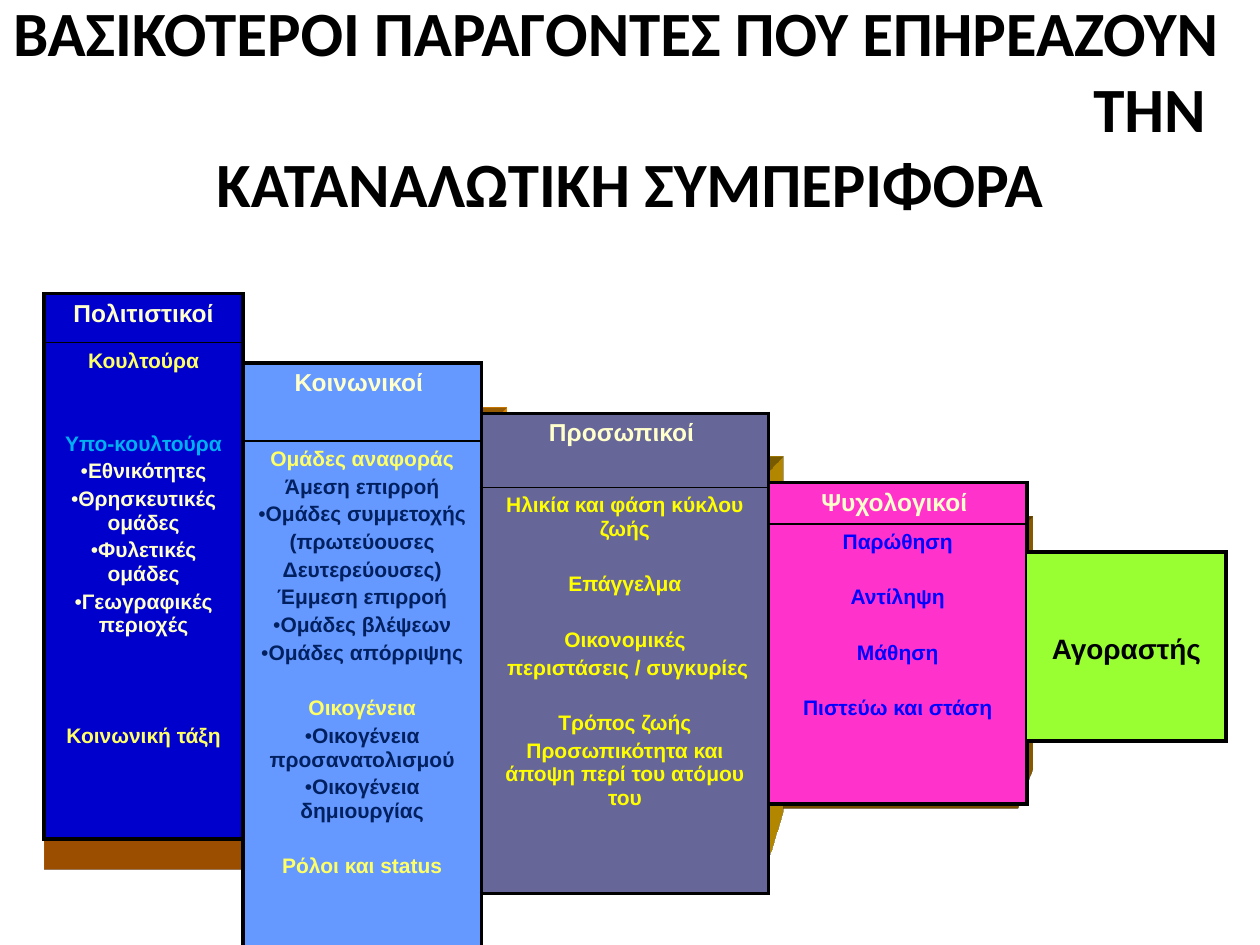
import pptx
import pptx.util
import pptx.dml.color
import pptx.enum.shapes
import pptx.enum.text
from lxml import etree

RGBColor = pptx.dml.color.RGBColor
Pt = pptx.util.Pt
ALIGN = pptx.enum.text.PP_ALIGN
ANCHOR = pptx.enum.text.MSO_ANCHOR
A = "http://schemas.openxmlformats.org/drawingml/2006/main"

BLACK = RGBColor(0x00, 0x00, 0x00)
CREAM = RGBColor(0xFF, 0xFF, 0xCC)
LEMON = RGBColor(0xFF, 0xFF, 0x66)
YELLOW = RGBColor(0xFF, 0xFF, 0x00)
SKY = RGBColor(0x00, 0xB0, 0xF0)
NAVY = RGBColor(0x00, 0x20, 0x60)
BLUE = RGBColor(0x00, 0x00, 0xFF)
CULTURAL = RGBColor(0x00, 0x00, 0xCC)
SOCIAL = RGBColor(0x66, 0x99, 0xFF)
PERSONAL = RGBColor(0x66, 0x66, 0x99)
PSYCHOLOGICAL = RGBColor(0xFF, 0x33, 0xCC)
BUYER = RGBColor(0x99, 0xFF, 0x33)

LINE_PITCH = 15.84  # one 12 pt line with its spacing, in points
THICK, THIN = 2.25, 1


def write(frame, text, *, size, color, font="Arial", align=ALIGN.CENTER,
          gap=0, bullet=False, right=0):
    """Add a bold paragraph; gap is the number of free lines above it."""
    first = not frame.text
    paragraph = frame.paragraphs[0] if first else frame.add_paragraph()
    properties = paragraph._p.get_or_add_pPr()
    for name, value in [("marL", 0), ("marR", right), ("indent", 0)]:
        properties.set(name, str(int(value)))
    if bullet:
        etree.SubElement(properties, f"{{{A}}}buFont", typeface="Arial")
        etree.SubElement(properties, f"{{{A}}}buChar", char="•")
    paragraph.alignment = align
    if not first and font == "Arial":
        paragraph.space_before = Pt(0.2 * size + gap * LINE_PITCH)
    run = paragraph.add_run()
    run.text = text
    run.font.name, run.font.size, run.font.bold = font, Pt(size), True
    run.font.color.rgb = color


def style_cell(cell, fill, left=THICK, right=THICK, top=THICK, bottom=THICK):
    properties = cell._tc.get_or_add_tcPr()
    for side, width in zip("LRTB", (left, right, top, bottom)):
        line = etree.SubElement(properties, f"{{{A}}}ln{side}", w=str(Pt(width)))
        if width:
            solid = etree.SubElement(line, f"{{{A}}}solidFill")
            etree.SubElement(solid, f"{{{A}}}srgbClr", val=str(BLACK))
        else:
            etree.SubElement(line, f"{{{A}}}noFill")
    cell.fill.solid()
    cell.fill.fore_color.rgb = fill


deck = pptx.Presentation()
deck.slide_width, deck.slide_height = pptx.util.Inches(10), pptx.util.Inches(7.5)
COL, ROW = deck.slide_width / 100, deck.slide_height / 75
slide = deck.slides.add_slide(deck.slide_layouts[5])

title = slide.shapes.title
title.left, title.top = 0, 0
title.width, title.height = deck.slide_width, int(17 * ROW)
heading = title.text_frame
heading.word_wrap = True
heading.auto_size = pptx.enum.text.MSO_AUTO_SIZE.NONE
heading.vertical_anchor = ANCHOR.MIDDLE
for line, align, right in [
    ("ΒΑΣΙΚΟΤΕΡΟΙ ΠΑΡΑΓΟΝΤΕΣ ΠΟΥ ΕΠΗΡΕΑΖΟΥΝ", ALIGN.CENTER, 2.2 * COL),
    ("ΤΗΝ", ALIGN.RIGHT, 3.3 * COL),
    ("ΚΑΤΑΝΑΛΩΤΙΚΗ ΣΥΜΠΕΡΙΦΟΡΑ", ALIGN.CENTER, 0),
]:
    write(heading, line, size=36, color=BLACK, font="Calibri", align=align, right=right)

# Extruded blocks standing behind the panels
for left, top, width, height, color in [
    (60.2, 42.2, 20.5, 22, RGBColor(0x99, 0x66, 0x00)),
    (37.4, 37.5, 23.6, 30.7, RGBColor(0xCC, 0x99, 0x00)),
    (20.1, 33.6, 18.9, 35.4, RGBColor(0xFF, 0x99, 0x00)),
    (3.5, 31.2, 15.7, 37.8, RGBColor(0xCC, 0x66, 0x00)),
]:
    block = slide.shapes.add_shape(
        pptx.enum.shapes.MSO_SHAPE.RECTANGLE,
        int(left * COL), int(top * ROW), int(width * COL), int(height * ROW))
    block.shadow.inherit = False
    block.fill.solid()
    block.fill.fore_color.rgb = color
    block.line.fill.background()
    scene = etree.SubElement(block._element.spPr, f"{{{A}}}scene3d")
    etree.SubElement(scene, f"{{{A}}}camera", prst="legacyPerspectiveTopRight")
    etree.SubElement(scene, f"{{{A}}}lightRig", rig="legacyFlat3", dir="b")
    depth = etree.SubElement(block._element.spPr, f"{{{A}}}sp3d",
                             extrusionH="887400", prstMaterial="legacyMatte")
    extrusion = etree.SubElement(depth, f"{{{A}}}extrusionClr")
    etree.SubElement(extrusion, f"{{{A}}}srgbClr", val=str(color))

# Each factor: heading, fill, top, width, row heights,
# then (text, colour, free lines above, bullet)
factors = [
    ("Πολιτιστικοί", CULTURAL, 23.3, 15.8, (3.9, 39.4), [
        ("Κουλτούρα", LEMON, 0, False),
        ("Υπο-κουλτούρα", SKY, 2, False),
        ("Εθνικότητες", CREAM, 0, True),
        ("Θρησκευτικές ομάδες", CREAM, 0, True),
        ("Φυλετικές ομάδες", CREAM, 0, True),
        ("Γεωγραφικές περιοχές", CREAM, 0, True),
        ("Κοινωνική τάξη", LEMON, 3, False)]),
    ("Κοινωνικοί ", SOCIAL, 28.8, 18.9, (6.2, 40.2), [
        ("Ομάδες αναφοράς", LEMON, 0, False),
        ("Άμεση επιρροή", NAVY, 0, False),
        ("Ομάδες συμμετοχής", NAVY, 0, True),
        ("(πρωτεύουσες", NAVY, 0, False),
        ("Δευτερεύουσες)", NAVY, 0, False),
        ("Έμμεση επιρροή", NAVY, 0, False),
        ("Ομάδες βλέψεων", NAVY, 0, True),
        ("Ομάδες απόρριψης", NAVY, 0, True),
        ("Οικογένεια", LEMON, 1, False),
        ("Οικογένεια προσανατολισμού", NAVY, 0, True),
        ("Οικογένεια δημιουργίας", NAVY, 0, True),
        ("Ρόλοι και status", LEMON, 1, False)]),
    ("Προσωπικοί ", PERSONAL, 32.8, 22.8, (5.9, 32.2), [
        ("Ηλικία και φάση κύκλου ζωής", YELLOW, 0, False),
        ("Επάγγελμα", YELLOW, 1, False),
        ("Οικονομικές", YELLOW, 1, False),
        (" περιστάσεις / συγκυρίες", YELLOW, 0, False),
        ("Τρόπος ζωής", YELLOW, 1, False),
        ("Προσωπικότητα και άποψη περί του ατόμου του", YELLOW, 0, False)]),
    ("Ψυχολογικοί ", PSYCHOLOGICAL, 38.3, 20.5, (3.3, 22.2), [
        ("Παρώθηση", BLUE, 0, False),
        ("Αντίληψη", BLUE, 1, False),
        ("Μάθηση", BLUE, 1, False),
        ("Πιστεύω και στάση", BLUE, 1, False)]),
    ("Αγοραστής", BUYER, 43.8, 15.8, (15,), []),
]

left = 3.5
for name, fill, top, width, heights, items in factors:
    panel = slide.shapes.add_table(
        len(heights), 1, int(left * COL), int(top * ROW),
        int(width * COL), int(sum(heights) * ROW)).table
    panel.first_row = panel.horz_banding = False
    for row, height in zip(panel.rows, heights):
        row.height = int(height * ROW)
    head = panel.cell(0, 0)
    if items:
        style_cell(head, fill, bottom=THIN)
        write(head.text_frame, name, size=14, color=CREAM)
        body = panel.cell(1, 0)
        style_cell(body, fill, top=THIN)
        for text, color, gap, bullet in items:
            write(body.text_frame, text, size=12, color=color, gap=gap, bullet=bullet)
    else:
        style_cell(head, fill, left=0)
        head.vertical_anchor = ANCHOR.MIDDLE
        head.margin_top = int(ROW)
        write(head.text_frame, name, size=16, color=BLACK)
    left += width

deck.save("out.pptx")
